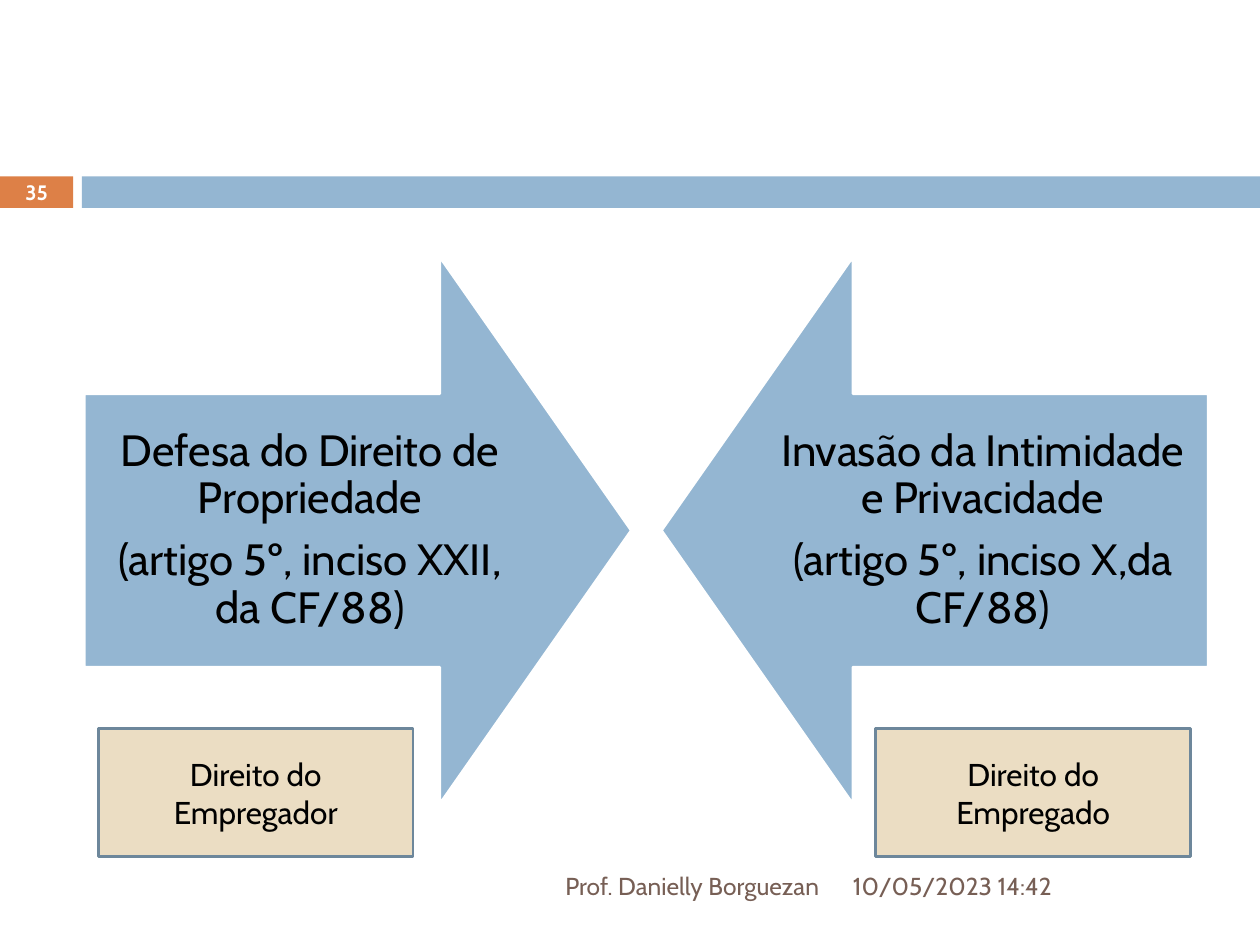
"""Build the slide that sets the employer's right against the employee's right."""
from pptx import Presentation
from pptx.dml.color import RGBColor
from pptx.enum import shapes, text
from pptx.util import Inches, Pt

THEME = {
    "font": "Cabin",
    "blue": "94B6D2", "orange": "DD8047", "sand": "EBDDC3", "edge": "6D879B",
    "brown": "775F55", "white": "FFFFFF", "black": "000000",
    "arrow": 25, "label": 18, "footer": 14, "number": 11.9,
}
SHAPE, ALIGN = shapes.MSO_SHAPE, text.PP_ALIGN

ARROWS = [
    (SHAPE.RIGHT_ARROW, 0.67,
     ["Defesa do Direito de Propriedade", "(artigo 5º, inciso XXII, da CF/88)"]),
    (SHAPE.LEFT_ARROW, 5.25,
     ["Invasão da Intimidade e Privacidade", "(artigo 5º, inciso X,da CF/88)"]),
]
LABELS = [(0.78, "Direito do Empregador"), (6.95, "Direito do Empregado")]
FOOTERS = [
    (0.67, 5.93, "Prof. Danielly Borguezan", ALIGN.RIGHT),
    (6.67, 2.92, "10/05/2023 14:42", ALIGN.LEFT),
]
NUMBER = "35"


def color(name):
    return RGBColor.from_string(THEME[name])


def add_shape(s, kind, box, fill, line=None):
    sp = s.shapes.add_shape(kind, *map(Inches, box))
    sp.shadow.inherit = False
    sp.fill.solid()
    sp.fill.fore_color.rgb = color(fill)
    if line:
        sp.line.color.rgb = color(line)
        sp.line.width = Pt(1.5)
    else:
        sp.line.fill.background()
    return sp


def write(sp, lines, size, ink, align=ALIGN.CENTER, bold=False):
    tf = sp.text_frame
    tf.word_wrap = True
    tf.vertical_anchor = text.MSO_ANCHOR.MIDDLE
    tf.text = "\n".join(lines)
    for p in tf.paragraphs:
        p.alignment = align
        p.font.name = THEME["font"]
        p.font.size = Pt(THEME[size])
        p.font.bold = bold
        p.font.color.rgb = color(ink)
    return tf


def main():
    prs = Presentation()
    prs.slide_width, prs.slide_height = Inches(10), Inches(7.5)
    s = prs.slides.add_slide(prs.slide_layouts[6])

    number = add_shape(s, SHAPE.RECTANGLE, (0, 1.4, 0.58, 0.25), "orange")
    write(number, [NUMBER], "number", "white", bold=True)
    add_shape(s, SHAPE.RECTANGLE, (0.65, 1.4, 9.35, 0.25), "blue")

    for kind, left, lines in ARROWS:
        sp = add_shape(s, kind, (left, 2.04, 4.34, 4.34), "blue", "white")
        sp.adjustments[0], sp.adjustments[1] = 0.5, 0.35
        tf = write(sp, lines, "arrow", "black")
        tf.margin_left = tf.margin_right = Inches(0.19)
        tf.margin_top = tf.margin_bottom = Inches(0.19)
        for p in tf.paragraphs:
            p.line_spacing = 0.9
            p.space_after = Pt(0.35 * THEME["arrow"])

    for left, label in LABELS:
        sp = add_shape(s, SHAPE.RECTANGLE, (left, 5.78, 2.5, 1.02), "sand", "edge")
        write(sp, [label], "label", "black")

    for left, width, label, align in FOOTERS:
        sp = s.shapes.add_textbox(*map(Inches, (left, 6.83, width, 0.4)))
        write(sp, [label], "footer", "brown", align)

    prs.save("out.pptx")


if __name__ == "__main__":
    main()
